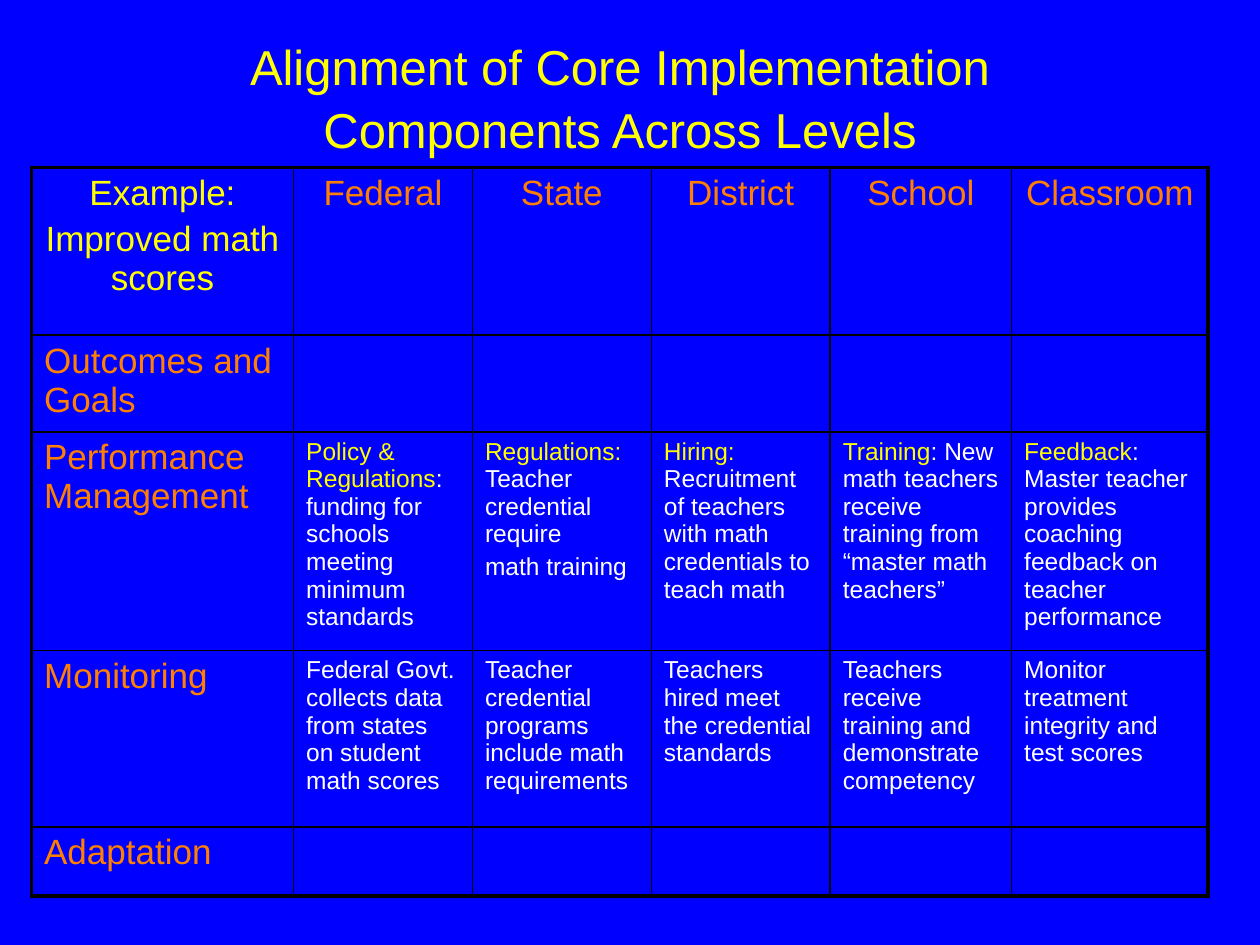
"""Build a slide aligning core implementation components across levels."""
from lxml import etree
from pptx import Presentation
from pptx import util as u
from pptx.dml.color import RGBColor
from pptx.enum import text
from pptx.oxml import ns

BLUE, YELLOW, ORANGE, WHITE, BLACK = "0000FF", "FFFF00", "FF8000", "FFFFFF", "000000"
COLUMN_WIDTHS = [2.08, 1.42, 1.42, 1.42, 1.44, 1.56]
ROW_HEIGHTS = [1.33, 0.71, 1.62, 1.4, 0.55]
LEVELS = ["Federal", "State", "District", "School", "Classroom"]
COMPONENTS = ["Outcomes and Goals", "Performance Management", "Monitoring", "Adaptation"]
DETAILS = {
    2: [
        ("Policy & Regulations", ": funding for schools meeting minimum standards"),
        ("Regulations:", " Teacher credential require\nmath training"),
        ("Hiring:", " Recruitment of teachers with math credentials to teach math"),
        ("Training", ": New math teachers receive training from “master math teachers”"),
        ("Feedback", ": Master teacher provides coaching feedback on teacher performance"),
    ],
    3: [
        ("", "Federal Govt. collects data from states on student math scores"),
        ("", "Teacher credential programs include math requirements"),
        ("", "Teachers hired meet the credential standards"),
        ("", "Teachers receive training and demonstrate competency"),
        ("", "Monitor treatment integrity and test scores"),
    ],
}


def color(value):
    return RGBColor.from_string(value)


class SlideBuilder:
    def __init__(self, deck, font="Arial"):
        self.font = font
        self.slide = deck.slides.add_slide(deck.slide_layouts[6])

    def background(self, fill):
        self.slide.background.fill.solid()
        self.slide.background.fill.fore_color.rgb = color(fill)

    def style(self, span, size, ink):
        span.font.name = self.font
        span.font.size = u.Pt(size)
        span.font.color.rgb = color(ink)

    def title(self, words, left, top, width, height):
        box = self.slide.shapes.add_textbox(*map(u.Inches, (left, top, width, height)))
        frame = box.text_frame
        frame.word_wrap = True
        frame.vertical_anchor = text.MSO_ANCHOR.MIDDLE
        para = frame.paragraphs[0]
        para.text = words
        para.alignment = text.PP_ALIGN.CENTER
        para.line_spacing = 1.08
        for span in para.runs:
            self.style(span, 28, YELLOW)

    def table(self, left, top, widths, heights):
        frame = self.slide.shapes.add_table(
            len(heights), len(widths), u.Inches(left), u.Inches(top),
            u.Inches(sum(widths)), u.Inches(sum(heights)))
        table = frame.table
        table.first_row = table.horz_banding = False
        for column, width in zip(table.columns, widths):
            column.width = u.Inches(width)
        for row, height in zip(table.rows, heights):
            row.height = u.Inches(height)
        last_row, last_column = len(heights) - 1, len(widths) - 1
        for r in range(len(heights)):
            for c in range(len(widths)):
                outer = {"L": c == 0, "R": c == last_column, "T": r == 0, "B": r == last_row}
                self.borders(table.cell(r, c), outer)
        return table

    def borders(self, cell, outer):
        properties = cell._tc.get_or_add_tcPr()
        for side, is_outer in outer.items():
            width = u.Pt(2.25 if is_outer else 1)
            line = etree.SubElement(properties, ns.qn(f"a:ln{side}"), w=str(int(width)))
            fill = etree.SubElement(line, ns.qn("a:solidFill"))
            etree.SubElement(fill, ns.qn("a:srgbClr"), val=BLACK)
        cell.fill.background()

    def cell_text(self, cell, words, size, ink, lead="", centered=False):
        frame = cell.text_frame
        frame.text = words
        for index, para in enumerate(frame.paragraphs):
            if centered:
                para.alignment = text.PP_ALIGN.CENTER
            if index:
                para.space_before = u.Pt(size * 0.2)
            elif lead:
                rest = para.text
                para.text = lead
                para.add_run().text = rest
            for span in para.runs:
                self.style(span, size, ink)
        if lead:
            frame.paragraphs[0].runs[0].font.color.rgb = color(YELLOW)


def main():
    deck = Presentation()
    deck.slide_width, deck.slide_height = u.Inches(10), u.Inches(7.5)
    page = SlideBuilder(deck)
    page.background(BLUE)
    page.title("Alignment of Core Implementation\vComponents Across Levels", 0.67, 0.17, 8.5, 1.17)
    table = page.table(0.25, 1.33, COLUMN_WIDTHS, ROW_HEIGHTS)
    page.cell_text(table.cell(0, 0), "Example:\nImproved math scores", 20, YELLOW, centered=True)
    for column, level in enumerate(LEVELS, 1):
        page.cell_text(table.cell(0, column), level, 20, ORANGE, centered=True)
    for row, component in enumerate(COMPONENTS, 1):
        page.cell_text(table.cell(row, 0), component, 20, ORANGE)
    for row, entries in DETAILS.items():
        for column, (lead, words) in enumerate(entries, 1):
            page.cell_text(table.cell(row, column), words, 14, WHITE, lead)
    deck.save("out.pptx")


if __name__ == "__main__":
    main()
